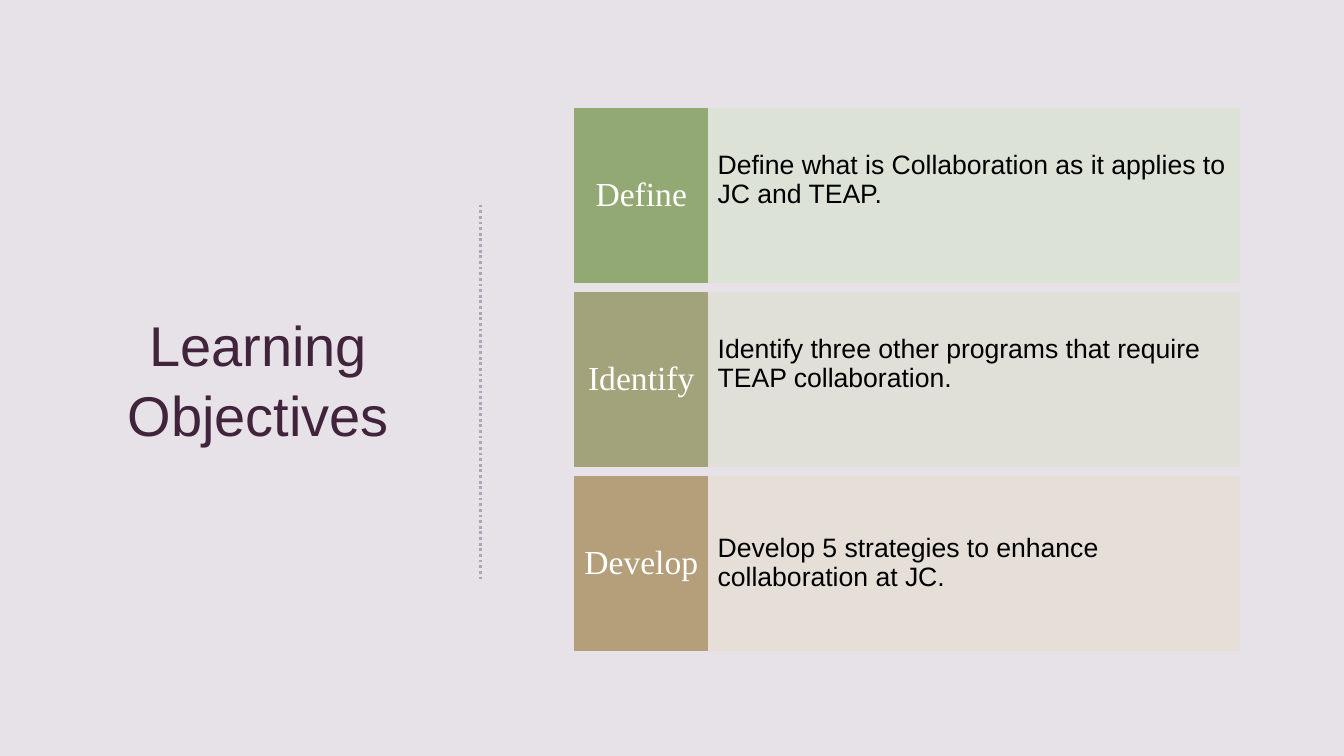
from lxml import etree
from pptx import Presentation
from pptx import util as u
from pptx.dml.color import RGBColor
from pptx.enum import dml, shapes, text
from pptx.oxml.ns import qn

COLORS = {
    "background": "E7E2E8", "title": "41243C", "divider": "B2A2B5",
    "label": "FFFFFF", "body": "000000",
}
# verb, objective, label fill, panel fill, extra space below the objective
OBJECTIVES = [
    ("Define", "Define what is\u00a0Collaboration as it applies to JC and TEAP.".replace("\u00a0", " "),
     "92A973", "DCE2D5", 0.3),
    ("Identify", "Identify three other programs that require TEAP collaboration.",
     "A3A37B", "E0E0D7", 0.3),
    ("Develop", "Develop 5 strategies to enhance collaboration at JC.",
     "B59E7A", "E5DFD7", 0),
]
LEFT, TOP, LABEL_WIDTH, PANEL_WIDTH = 5.7, 1.08, 1.32, 5.27
ROW_HEIGHT, ROW_PITCH = 1.72, 1.825


def write(box, words, font, size, color, align, spacing):
    frame = box.text_frame
    frame.word_wrap = True
    frame.vertical_anchor = text.MSO_ANCHOR.MIDDLE
    para = frame.paragraphs[0]
    para.text = words
    para.alignment = align
    para.line_spacing = spacing
    para.font.name = font
    para.font.size = u.Pt(size)
    para.font.color.rgb = RGBColor.from_string(color)
    return frame


def add_block(page, left, top, width, color, opacity):
    """Add one cell of a row, its fill and outline sharing a colour and opacity in percent."""
    block = page.shapes.add_shape(
        shapes.MSO_SHAPE.RECTANGLE,
        u.Inches(left), u.Inches(top), u.Inches(width), u.Inches(ROW_HEIGHT))
    block.shadow.inherit = False
    block.fill.solid()
    block.line.width = u.Pt(1)
    for paint in (block.fill.fore_color, block.line.color):
        paint.rgb = RGBColor.from_string(color)
    for tone in block._element.spPr.iter(qn("a:srgbClr")):
        etree.SubElement(tone, qn("a:alpha"), val=str(opacity * 1000))
    return block


deck = Presentation()
deck.slide_width, deck.slide_height = u.Inches(13.33), u.Inches(7.5)
page = deck.slides.add_slide(deck.slide_layouts[6])
page.background.fill.solid()
page.background.fill.fore_color.rgb = RGBColor.from_string(COLORS["background"])

title = page.shapes.add_textbox(u.Inches(1.04), u.Inches(1.73), u.Inches(3.04), u.Inches(4.03))
write(title, "Learning Objectives", "Arial", 40, COLORS["title"], text.PP_ALIGN.CENTER, 1.04)

divider = page.shapes.add_connector(
    shapes.MSO_CONNECTOR.STRAIGHT,
    u.Inches(4.77), u.Inches(2.03), u.Inches(4.77), u.Inches(5.74))
divider.line.color.rgb = RGBColor.from_string(COLORS["divider"])
divider.line.width = u.Pt(2)
divider.line.dash_style = dml.MSO_LINE.ROUND_DOT
etree.SubElement(divider._element.spPr, qn("a:effectLst"))

for row, (verb, objective, label_fill, panel_fill, space_below) in enumerate(OBJECTIVES):
    top = TOP + row * ROW_PITCH
    panel = add_block(page, LEFT + LABEL_WIDTH, top, PANEL_WIDTH, panel_fill, 90)
    frame = write(panel, objective, "Arial", 19, COLORS["body"], text.PP_ALIGN.LEFT, 0.9)
    frame.margin_top, frame.margin_bottom = 0, u.Inches(space_below)

    label = add_block(page, LEFT, top, LABEL_WIDTH, label_fill, 100)
    frame = write(label, verb, "Times New Roman", 24, COLORS["label"], text.PP_ALIGN.CENTER, 0.9)
    frame.margin_left = frame.margin_right = u.Inches(0.07)

deck.save("out.pptx")
